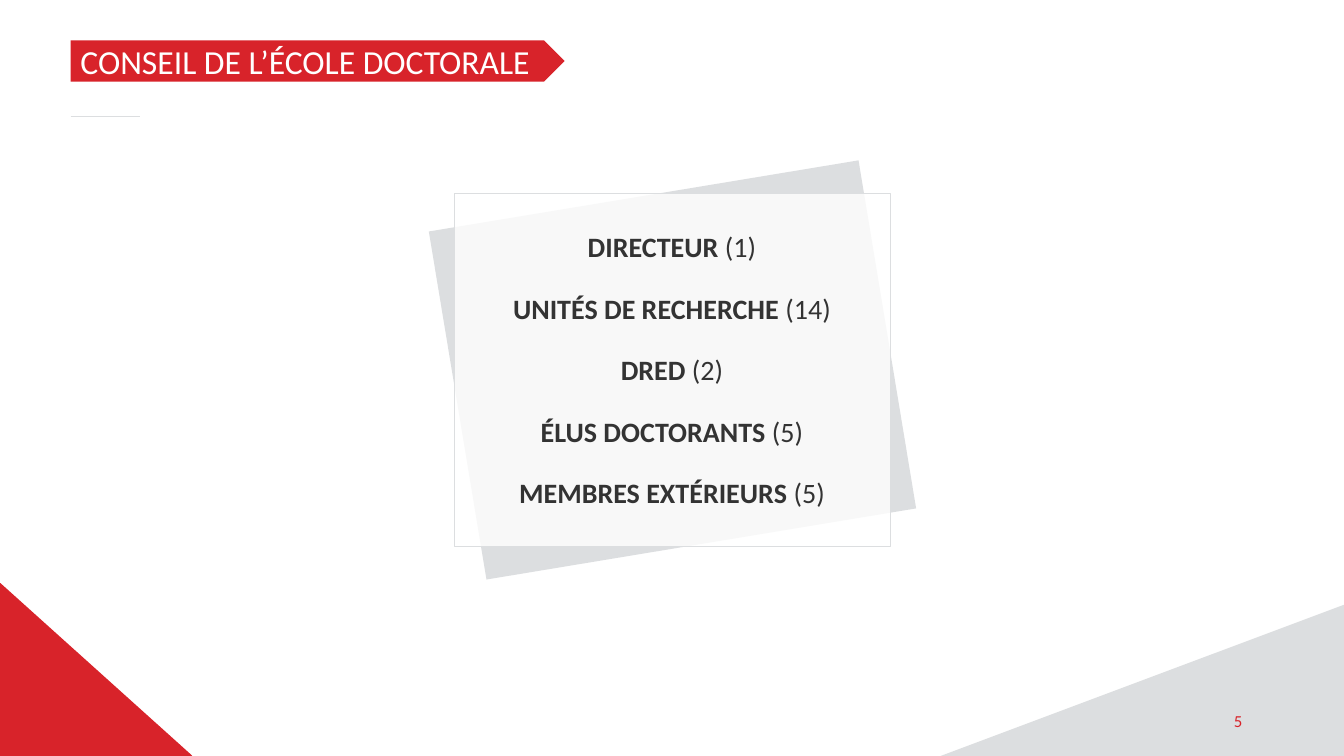
from lxml import etree
from pptx import Presentation
from pptx import util as u
from pptx.dml.color import RGBColor
from pptx.enum import shapes, text
from pptx.oxml.ns import qn

PX = 9144  # 100 px to the inch
FONT = "Calibri"
RED, GREY, WHITE, DARK = "D8232A", "DCDEE0", "FFFFFF", "333333"

MEMBERS = [
    ("DIRECTEUR ", "(1)"),
    ("UNITÉS DE RECHERCHE ", "(14)"),
    ("DRED ", "(2)"),
    ("ÉLUS DOCTORANTS ", "(5)"),
    ("MEMBRES EXTÉRIEURS ", "(5)"),
]
FIRST_ROW, ROW_PITCH = 223, 61


def px(*lengths):
    return [u.Emu(length * PX) for length in lengths]


def paint(color_format, color):
    color_format.rgb = RGBColor.from_string(color)


def add_block(slide, preset, box, fill, line=None, opacity=None):
    block = slide.shapes.add_shape(preset, *px(*box))
    block.shadow.inherit = False
    block.fill.solid()
    paint(block.fill.fore_color, fill)
    if opacity is not None:
        tint = block._element.spPr.find(qn("a:solidFill"))[0]
        etree.SubElement(tint, qn("a:alpha"), val=str(opacity * 1000))
    if line:
        paint(block.line.color, line)
        block.line.width = u.Pt(1)
    else:
        block.line.fill.background()
    return block


def add_rule(slide, start, end, color, width):
    rule = slide.shapes.add_connector(
        shapes.MSO_CONNECTOR.STRAIGHT, *px(*start, *end))
    paint(rule.line.color, color)
    rule.line.width = u.Pt(width)
    etree.SubElement(rule._element.spPr, qn("a:effectLst"))


def write(frame, runs, size, color, align, anchor):
    """Fill a text frame with one paragraph of (wording, bold) runs."""
    frame.word_wrap = True
    frame.vertical_anchor = anchor
    paragraph = frame.paragraphs[0]
    paragraph.alignment = align
    for wording, bold in runs:
        run = paragraph.add_run()
        run.text = wording
        run.font.name = FONT
        run.font.size = u.Pt(size)
        run.font.bold = bold
        paint(run.font.color, color)


def add_label(slide, box, runs, size, color, align, anchor):
    label = slide.shapes.add_textbox(*px(*box))
    write(label.text_frame, runs, size, color, align, anchor)


def main():
    prs = Presentation()
    prs.slide_width, prs.slide_height = px(1333, 750)
    slide = prs.slides.add_slide(prs.slide_layouts[6])
    preset, align, anchor = shapes.MSO_SHAPE, text.PP_ALIGN, text.MSO_ANCHOR

    # Corner decoration and page number
    add_rule(slide, (70, 115), (139, 115), GREY, 0.5)
    add_block(slide, preset.RIGHT_TRIANGLE, (0, 579, 190, 171), RED, RED)
    right_corner = add_block(
        slide, preset.RIGHT_TRIANGLE, (933, 600, 400, 150), GREY)
    right_corner._element.spPr.xfrm.set("flipH", "1")
    add_label(slide, (942, 695, 300, 40), [("5", False)], 12, RED,
              align.RIGHT, anchor.MIDDLE)

    # Tilted sheet behind the translucent card
    card_box = (451, 192, 432, 350)
    tilted_sheet = add_block(slide, preset.RECTANGLE, card_box, GREY)
    tilted_sheet.rotation = 350.6
    add_block(slide, preset.RECTANGLE, card_box, WHITE, GREY, opacity=80)

    # Title banner
    banner = add_block(slide, preset.PENTAGON, (70, 40, 490, 41), RED)
    write(banner.text_frame, [("CONSEIL DE L’ÉCOLE DOCTORALE", False)],
          24, WHITE, align.LEFT, anchor.MIDDLE)

    # Council members
    for row, (role, count) in enumerate(MEMBERS):
        add_label(slide, (465, FIRST_ROW + row * ROW_PITCH, 403, 44),
                  [(role, True), (count, False)], 20, DARK,
                  align.CENTER, anchor.TOP)

    prs.save("out.pptx")


if __name__ == "__main__":
    main()
